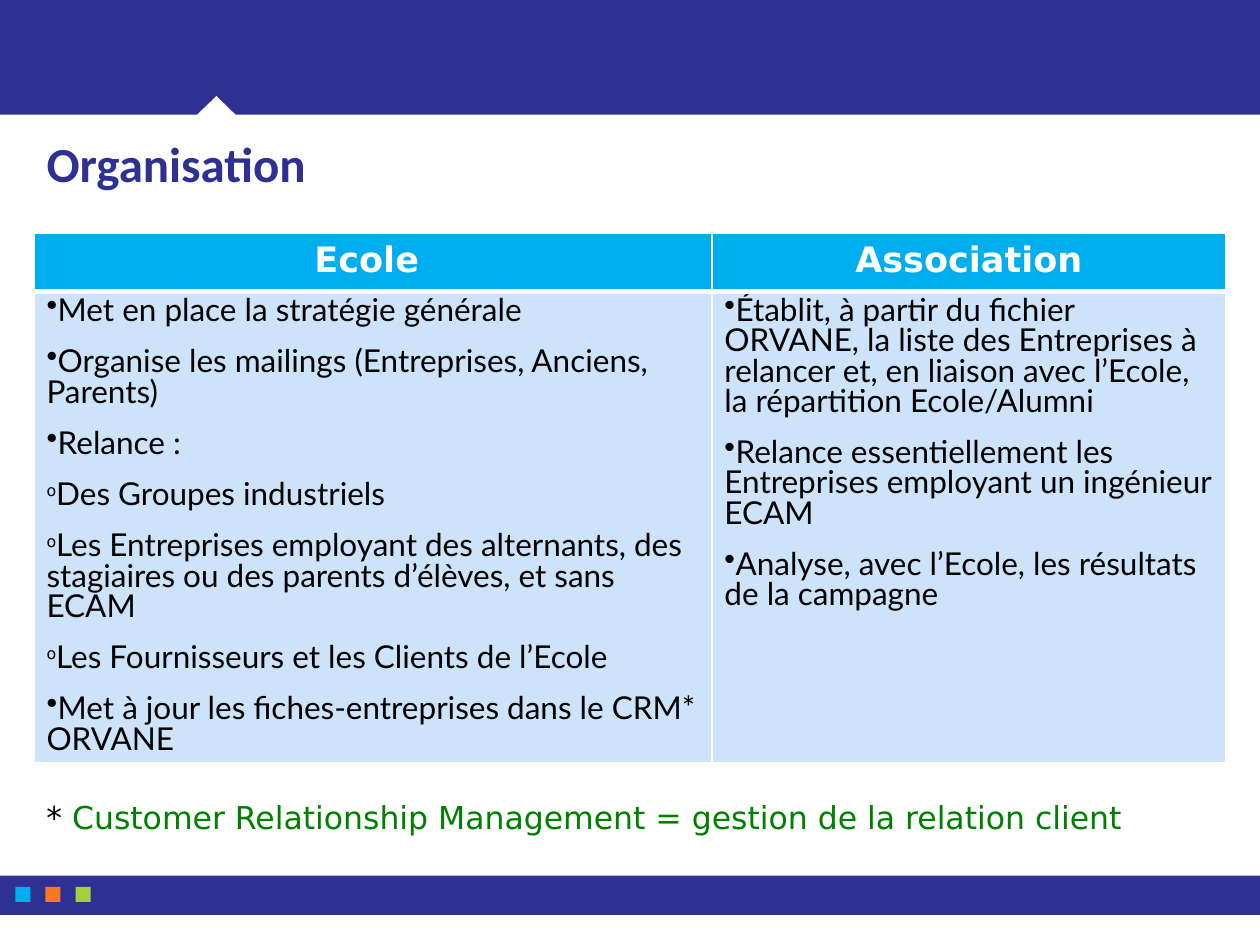
from lxml import etree
from pptx import Presentation
from pptx import util as u
from pptx.dml.color import RGBColor
from pptx.enum import shapes, text
from pptx.oxml.ns import qn

Pt = u.Pt
THEME = dict(
    navy="2E3192", cyan="00AEEF", orange="F47920", lime="A6CE43",
    pale="CCE3F9", green="008000", white="FFFFFF", black="000000",
    title=dict(name="Calibri", size=Pt(28), bold=True),
    head=dict(name="DejaVu Sans", size=Pt(20), bold=True),
    body=dict(name="Lato", size=Pt(18), bold=False),
    note=dict(name="DejaVu Sans", size=Pt(18)),
)
TITLE = "Organisation"
COLUMNS = [
    ("Ecole ", 387.4, [
        ("•", "Met en place la stratégie générale"),
        ("•", "Organise les mailings (Entreprises, Anciens, Parents)"),
        ("•", "Relance :"),
        ("o", "Des Groupes industriels"),
        ("o", "Les Entreprises employant des alternants, des stagiaires "
              "ou des parents d’élèves, et sans ECAM"),
        ("o", "Les Fournisseurs et les Clients de l’Ecole"),
        ("•", "Met à jour les fiches-entreprises dans le CRM* ORVANE"),
    ]),
    ("Association", 293.8, [
        ("•", "Établit, à partir du fichier ORVANE, la liste des Entreprises à relancer "
              "et, en liaison avec l’Ecole, la répartition Ecole/Alumni"),
        ("•", "Relance essentiellement les Entreprises employant un ingénieur ECAM"),
        ("•", "Analyse, avec l’Ecole, les résultats de la campagne"),
    ]),
]
NOTE = [("*", "black"),
        (" Customer Relationship Management = gestion de la relation client", "green")]
BULLETS = {"•": dict(indent=-14.4, size=None, level=0),
           "o": dict(indent=-11.5, size=50, level=1)}
W, H, LEFT = 720, 540, 19.4
BANNER = [(0, 0), (W, 0), (W, 65.6), (134.8, 65.6), (123.7, 54.8), (112.5, 65.6), (0, 65.6)]
ROWS = [33, 269.4]


def rgb(name):
    return RGBColor.from_string(THEME[name])


def style(font, kind, color):
    for key, value in THEME[kind].items():
        setattr(font, key, value)
    font.color.rgb = rgb(color)


def paint(sp, color):
    sp.shadow.inherit = False
    sp.fill.solid()
    sp.fill.fore_color.rgb = rgb(color)
    sp.line.fill.background()


def add_rect(s, x, y, w, h, color):
    paint(s.shapes.add_shape(shapes.MSO_SHAPE.RECTANGLE, Pt(x), Pt(y), Pt(w), Pt(h)), color)


def add_bullet(p, char):
    b = BULLETS[char]
    p.level = b["level"]
    pPr = p._p.get_or_add_pPr()
    pPr.set("marL", "0")
    pPr.set("indent", str(Pt(b["indent"])))
    if b["size"]:
        etree.SubElement(pPr, qn("a:buSzPct")).set("val", str(b["size"] * 1000))
    etree.SubElement(pPr, qn("a:buChar")).set("char", char)
    p.line_spacing, p.space_after = 0.8, Pt(12)


def format_cell(cell, color, widths):
    tcPr = cell._tc.get_or_add_tcPr()
    for side, width in widths.items():
        ln = etree.SubElement(tcPr, qn("a:ln" + side))
        ln.set("w", str(Pt(width)))
        fill = etree.SubElement(ln, qn("a:solidFill"))
        etree.SubElement(fill, qn("a:srgbClr")).set("val", THEME["white"])
    cell.fill.solid()
    cell.fill.fore_color.rgb = rgb(color)


def add_columns(s):
    total = sum(width for _, width, _ in COLUMNS)
    tbl = s.shapes.add_table(2, len(COLUMNS), Pt(LEFT), Pt(133.4), Pt(total), Pt(sum(ROWS))).table
    tbl.first_row = tbl.horz_banding = False
    for row, height in zip(tbl.rows, ROWS):
        row.height = Pt(height)
    for i, (name, width, items) in enumerate(COLUMNS):
        tbl.columns[i].width = Pt(width)
        head, body = tbl.cell(0, i), tbl.cell(1, i)
        format_cell(head, "cyan", dict(L=1, R=1, T=1, B=3))
        format_cell(body, "pale", dict(L=1, R=1, T=3, B=1))
        p = head.text_frame.paragraphs[0]
        p.alignment = text.PP_ALIGN.CENTER
        r = p.add_run()
        r.text = name
        style(r.font, "head", "white")
        tf = body.text_frame
        for j, (char, words) in enumerate(items):
            p = tf.add_paragraph() if j else tf.paragraphs[0]
            add_bullet(p, char)
            r = p.add_run()
            r.text = words
            style(r.font, "body", "black")


def main():
    prs = Presentation()
    prs.slide_width, prs.slide_height = Pt(W), Pt(H)
    s = prs.slides.add_slide(prs.slide_layouts[5])

    fb = s.shapes.build_freeform(*map(Pt, BANNER[0]))
    fb.add_line_segments([(Pt(x), Pt(y)) for x, y in BANNER[1:]], close=True)
    paint(fb.convert_to_shape(), "navy")
    add_rect(s, 0, 500.4, W, 22.4, "navy")
    for i, color in enumerate(("cyan", "orange", "lime")):
        add_rect(s, 8.8 + 17.2 * i, 506.8, 8.6, 8.6, color)

    sp = s.shapes.title
    frame = dict(left=LEFT, top=73.4, width=681.2, height=38.9)
    for key, value in frame.items():
        setattr(sp, key, Pt(value))
    tf = sp.text_frame
    tf.vertical_anchor = text.MSO_ANCHOR.MIDDLE
    tf.auto_size = text.MSO_AUTO_SIZE.NONE
    p = tf.paragraphs[0]
    p.alignment = text.PP_ALIGN.LEFT
    r = p.add_run()
    r.text = TITLE
    style(r.font, "title", "navy")

    add_columns(s)

    tf = s.shapes.add_textbox(Pt(LEFT), Pt(452.2), Pt(648.7), Pt(29)).text_frame
    tf.word_wrap = True
    tf.auto_size = text.MSO_AUTO_SIZE.SHAPE_TO_FIT_TEXT
    for words, color in NOTE:
        r = tf.paragraphs[0].add_run()
        r.text = words
        style(r.font, "note", color)

    prs.save("out.pptx")


if __name__ == "__main__":
    main()
